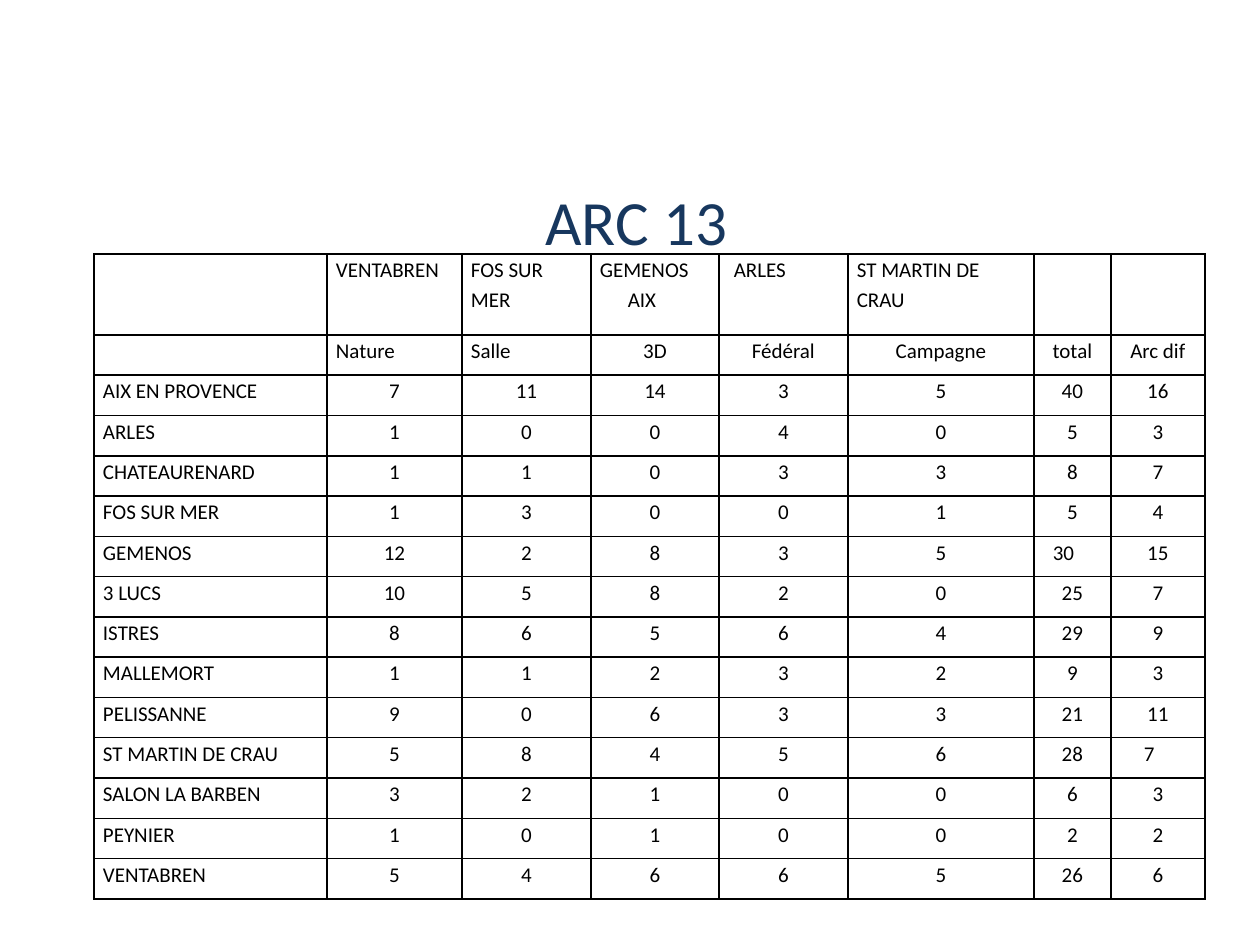
from typing import NamedTuple

import pptx
import pptx.dml.color
import pptx.enum.text
import pptx.oxml
import pptx.oxml.ns
import pptx.table
import pptx.util

PX = 914400 // 126
FONT = "Calibri"
BLACK = pptx.dml.color.RGBColor(0x00, 0x00, 0x00)
NAVY = pptx.dml.color.RGBColor(0x17, 0x37, 0x5E)
ALIGN = pptx.enum.text.PP_ALIGN

COL_WIDTHS = (233, 135, 129, 128, 129, 186, 77, 94)
HEADER_HEIGHT = 81
BODY_HEIGHT = 564
CELL_INSET = 9


class Club(NamedTuple):
    name: str
    scores: tuple[int, ...]  # nature, hall, 3D, federal, field, total, Arc dif


HEADERS = (
    ("", "VENTABREN", "FOS SUR MER", "GEMENOS\nAIX", "ARLES", "ST MARTIN DE CRAU", "", ""),
    ("", "Nature", "Salle", "3D", "Fédéral", "Campagne", "total", "Arc dif"),
)
CLUBS = (
    Club("AIX EN PROVENCE", (7, 11, 14, 3, 5, 40, 16)),
    Club("ARLES", (1, 0, 0, 4, 0, 5, 3)),
    Club("CHATEAURENARD", (1, 1, 0, 3, 3, 8, 7)),
    Club("FOS SUR MER", (1, 3, 0, 0, 1, 5, 4)),
    Club("GEMENOS", (12, 2, 8, 3, 5, 30, 15)),
    Club("3 LUCS", (10, 5, 8, 2, 0, 25, 7)),
    Club("ISTRES", (8, 6, 5, 6, 4, 29, 9)),
    Club("MALLEMORT", (1, 1, 2, 3, 2, 9, 3)),
    Club("PELISSANNE", (9, 0, 6, 3, 3, 21, 11)),
    Club("ST MARTIN DE CRAU", (5, 8, 4, 5, 6, 28, 7)),
    Club("SALON LA BARBEN", (3, 2, 1, 0, 0, 6, 3)),
    Club("PEYNIER", (1, 0, 1, 0, 0, 2, 2)),
    Club("VENTABREN", (5, 4, 6, 6, 5, 26, 6)),
)
# Left-aligned paragraphs set in from the cell edge: (row, column, paragraph)
INDENTS = {(0, 3, 1): 28, (0, 4, 0): 6, (6, 6, 0): 10, (11, 7, 0): 24}


def px(n: int) -> pptx.util.Emu:
    return pptx.util.Emu(n * PX)


def add_borders(cell: pptx.table._Cell) -> None:
    """Draw a black one-point line on each side of the cell."""
    tc_pr = cell._tc.get_or_add_tcPr()
    for i, side in enumerate("LRTB"):
        line = pptx.oxml.parse_xml(
            f'<a:ln{side} {pptx.oxml.ns.nsdecls("a")} w="12700">'
            f'<a:solidFill><a:srgbClr val="{BLACK}"/></a:solidFill></a:ln{side}>'
        )
        tc_pr.insert(i, line)


def is_left(row: int, col: int, para: int) -> bool:
    return (col == 0 or row == 0 or (row == 1 and col <= 2)
            or (row, col, para) in INDENTS)


def fill_cell(cell: pptx.table._Cell, row: int, col: int, text: str) -> None:
    cell.margin_left = cell.margin_right = px(CELL_INSET)
    cell.margin_top = cell.margin_bottom = 0
    cell.fill.background()
    add_borders(cell)
    if not text:
        return
    cell.text_frame.text = text
    for i, p in enumerate(cell.text_frame.paragraphs):
        p.alignment = ALIGN.LEFT if is_left(row, col, i) else ALIGN.CENTER
        p.line_spacing = 1.15
        indent = INDENTS.get((row, col, i))
        if indent:
            p._p.get_or_add_pPr().set("marL", str(px(indent)))
        for r in p.runs:
            r.font.name = FONT
            r.font.size = pptx.util.Pt(12)
            r.font.color.rgb = BLACK


prs = pptx.Presentation()
prs.slide_width, prs.slide_height = px(1260), px(945)
s = prs.slides.add_slide(prs.slide_layouts[6])

# Title
sp = s.shapes.add_textbox(0, px(125), px(1260), px(149))
tf = sp.text_frame
tf.word_wrap = True
tf.margin_top = px(58)
tf.margin_left, tf.margin_right = px(26), px(13)
tf.text = "ARC 13"
p = tf.paragraphs[0]
p.alignment = ALIGN.CENTER
r = p.runs[0]
r.font.name = FONT
r.font.size = pptx.util.Pt(36)
r.font.color.rgb = NAVY

# Results table
rows = HEADERS + tuple((club.name, *map(str, club.scores)) for club in CLUBS)
frame = s.shapes.add_table(len(rows), len(COL_WIDTHS), px(94), px(254),
                           px(sum(COL_WIDTHS)), px(HEADER_HEIGHT + BODY_HEIGHT))
table = frame.table
table.first_row = table.horz_banding = False
for column, width in zip(table.columns, COL_WIDTHS):
    column.width = px(width)
for i, texts in enumerate(rows):
    table.rows[i].height = px(HEADER_HEIGHT) if i == 0 else px(BODY_HEIGHT) // (len(rows) - 1)
    for j, text in enumerate(texts):
        fill_cell(table.cell(i, j), i, j, text)

prs.save("out.pptx")
